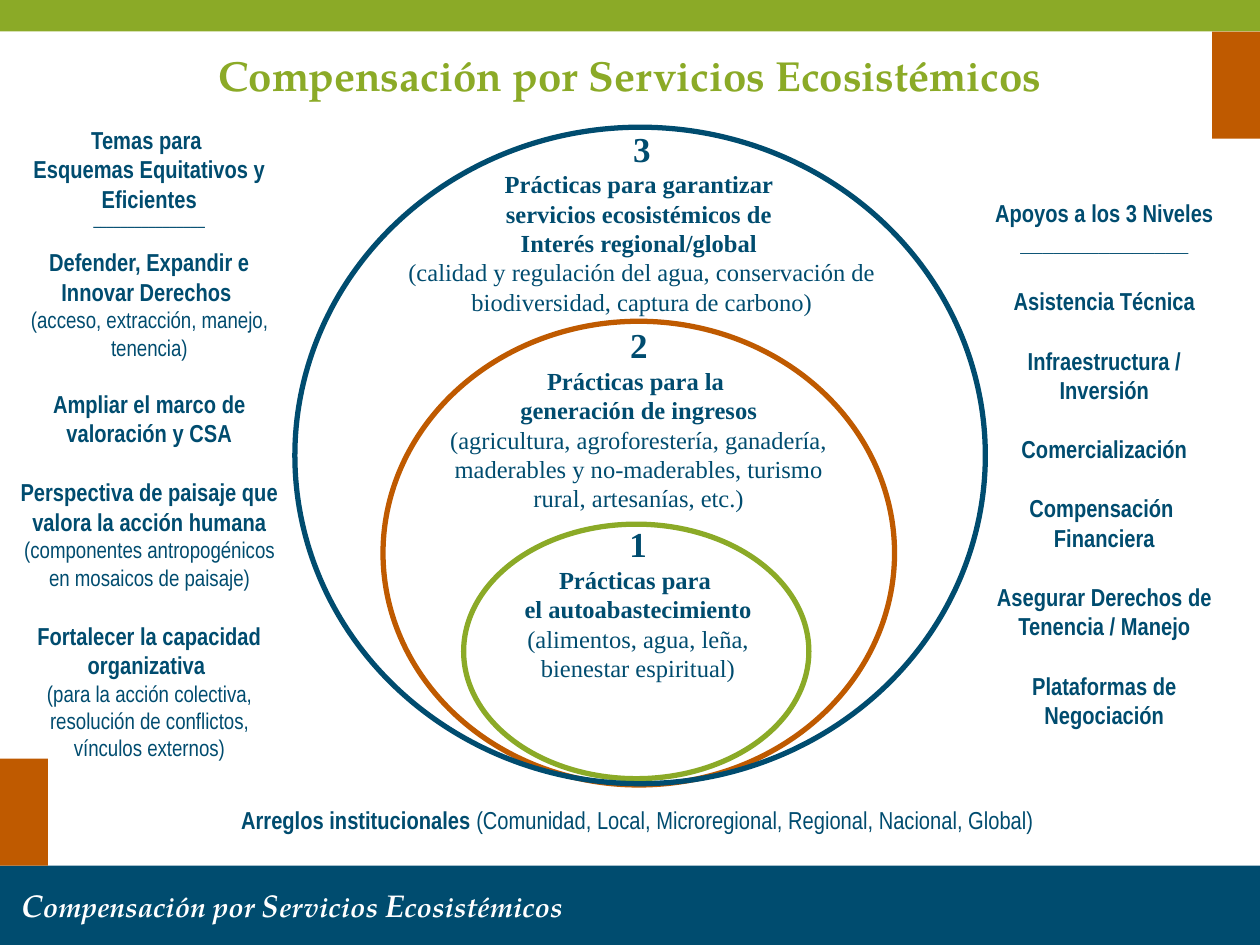
"""Build the slide on compensation for ecosystem services."""
import copy

import pptx
import pptx.dml.color
import pptx.enum.shapes
import pptx.enum.text
import pptx.oxml
import pptx.oxml.ns
import pptx.util

Inches, Pt = pptx.util.Inches, pptx.util.Pt
ALIGN, ANCHOR = pptx.enum.text.PP_ALIGN, pptx.enum.text.MSO_ANCHOR
SHAPE = pptx.enum.shapes.MSO_SHAPE
COLORS = {"navy": "004C6F", "green": "8BAA27", "orange": "BF5A00", "white": "FFFFFF"}
SERIF, NARROW, DISPLAY = "Times New Roman", "Arial Narrow", "TeX Gyre Pagella"

TITLE = "Compensación por Servicios Ecosistémicos"
BANDS = [("navy", (0, 6.87, 10, 0.63)), ("green", (0, 0, 10, 0.25)),
         ("orange", (9.62, 0.25, 0.38, 0.85)), ("orange", (0, 6.02, 0.38, 0.85))]
LEVELS = [
    ("1", "Prácticas para \nel autoabastecimiento",
     "(alimentos, agua, leña, bienestar espiritual)",
     (3.85, 4.09, 2.43, 1.51), "green", (3.68, 4.16, 2.74, 2.02)),
    ("2", "Prácticas para la \ngeneración de ingresos",
     "(agricultura, agroforestería, ganadería, maderables y no-maderables, turismo rural, artesanías, etc.)",
     (3.32, 2.51, 3.5, 1.34), "orange", (3.04, 2.55, 4.06, 3.68)),
    ("3", "Prácticas para garantizar \nservicios ecosistémicos de \nInterés regional/global ",
     "(calidad y regulación del agua, conservación de biodiversidad, captura de carbono)",
     (2.94, 0.95, 4.31, 1.4), "navy", (2.34, 1.01, 5.48, 5.21)),
]
# Each paragraph: space before, then spans of text, size, bold and optional font
THEMES = [
    (0, [("Temas para \nEsquemas Equitativos y Eficientes", 14, True)]),
    (0, [("________________", 8, True, "Calibri")]),
    (10, [("Defender, Expandir e Innovar Derechos \n", 14, True),
          ("(acceso, extracción, manejo, tenencia)", 13, False)]),
    (16, [("Ampliar el marco de valoración y CSA", 14, True)]),
    (17, [("Perspectiva de paisaje que valora la acción humana ", 14, True),
          ("(componentes antropogénicos en mosaicos de paisaje)", 13, False)]),
    (17, [("Fortalecer la capacidad organizativa ", 14, True)]),
    (0, [("(para la acción colectiva, resolución de conflictos, vínculos externos)", 13, False)]),
]
SUPPORTS = ["Asistencia Técnica", "Infraestructura / Inversión", "Comercialización",
            "Compensación \nFinanciera", "Asegurar Derechos de Tenencia / Manejo",
            "Plataformas de Negociación"]
SUPPORT_LIST = [(0, [("Apoyos a los 3 Niveles", 14, True)]),
                (0, [("_______________", 14, True)])]
SUPPORT_LIST += [(17, [(support, 14, True)]) for support in SUPPORTS]
ARRANGEMENTS = [(0, [("Arreglos institucionales ", 14, True),
                     ("(Comunidad, Local, Microregional, Regional, Nacional, Global)", 14, False)])]
FOOTER = [("C", 18), ("ompensación por ", 16), ("S", 18), ("ervicios ", 16),
          ("E", 18), ("cosistémicos", 16)]


def rgb(name):
    return pptx.dml.color.RGBColor.from_string(COLORS[name])


def place(box, area):
    box.left, box.top, box.width, box.height = map(Inches, area)


def add_span(para, text, size, bold, font, color, italic=False):
    for index, line in enumerate(text.split("\n")):
        if index:
            para.add_line_break()
            line_break = para._p.findall(pptx.oxml.ns.qn("a:br"))[-1]
            line_break.append(copy.deepcopy(span._r.rPr))
        if line:
            span = para.add_run()
            span.text = line
            span.font.size, span.font.name = Pt(size), font
            span.font.bold, span.font.italic = bold, italic
            span.font.color.rgb = rgb(color)


def write(box, paragraphs, font, color="navy", insets=(0.1, 0.05)):
    frame = box.text_frame
    frame.word_wrap = True
    frame.auto_size = pptx.enum.text.MSO_AUTO_SIZE.NONE
    frame.vertical_anchor = ANCHOR.TOP
    frame.margin_left = frame.margin_right = Inches(insets[0])
    frame.margin_top = frame.margin_bottom = Inches(insets[1])
    for index, (gap, spans) in enumerate(paragraphs):
        para = frame.add_paragraph() if index else frame.paragraphs[0]
        para.alignment = ALIGN.CENTER
        para.space_before = Pt(gap)
        if box.is_placeholder:
            properties = para._p.get_or_add_pPr()
            properties.set("marL", "0")
            properties.set("indent", "0")
            properties.append(pptx.oxml.parse_xml(f"<a:buNone {pptx.oxml.ns.nsdecls('a')}/>"))
        for text, size, bold, *other in spans:
            add_span(para, text, size, bold, other[0] if other else font, color)


def add_band(page, color, area):
    band = page.shapes.add_shape(SHAPE.RECTANGLE, *map(Inches, area))
    band.shadow.inherit = False
    band.fill.solid()
    band.fill.fore_color.rgb = rgb(color)
    band.line.fill.background()
    return band


def add_ring(page, color, area):
    ring = page.shapes.add_shape(SHAPE.OVAL, *map(Inches, area))
    ring.shadow.inherit = False
    ring.fill.background()
    ring.line.color.rgb = rgb(color)
    ring.line.width = Pt(3)


def main():
    deck = pptx.Presentation()
    deck.slide_width, deck.slide_height = Inches(10), Inches(7.5)
    page = deck.slides.add_slide(deck.slide_layouts[3])
    title, themes, supports = page.placeholders

    place(title, (0, 0.34, 10, 0.58))
    write(title, [(0, [(TITLE, 24, True)])], DISPLAY, "green")
    place(themes, (0.1, 0.93, 2.17, 5.12))
    write(themes, THEMES, NARROW, insets=(0.02, 0.06))
    place(supports, (7.76, 1.51, 2.01, 4.72))
    write(supports, SUPPORT_LIST, NARROW, insets=(0.02, 0.06))

    for number, heading, detail, area, _, _ in LEVELS:
        box = page.shapes.add_textbox(*map(Inches, area))
        write(box, [(0, [(number, 20, True)]), (0, [(heading, 14, True)]),
                    (0, [(detail, 14, False)])], SERIF, insets=(0.12, 0.06))
    for *_, color, area in LEVELS:
        add_ring(page, color, area)

    box = page.shapes.add_textbox(*map(Inches, (0.77, 6.34, 8.58, 0.34)))
    write(box, ARRANGEMENTS, NARROW)

    footer, *_ = [add_band(page, color, area) for color, area in BANDS]
    frame = footer.text_frame
    frame.margin_left = Inches(0.17)
    frame.vertical_anchor = ANCHOR.MIDDLE
    para = frame.paragraphs[0]
    para.alignment = ALIGN.LEFT
    for text, size in FOOTER:
        add_span(para, text, size, True, DISPLAY, "white", italic=True)

    deck.save("out.pptx")


if __name__ == "__main__":
    main()
